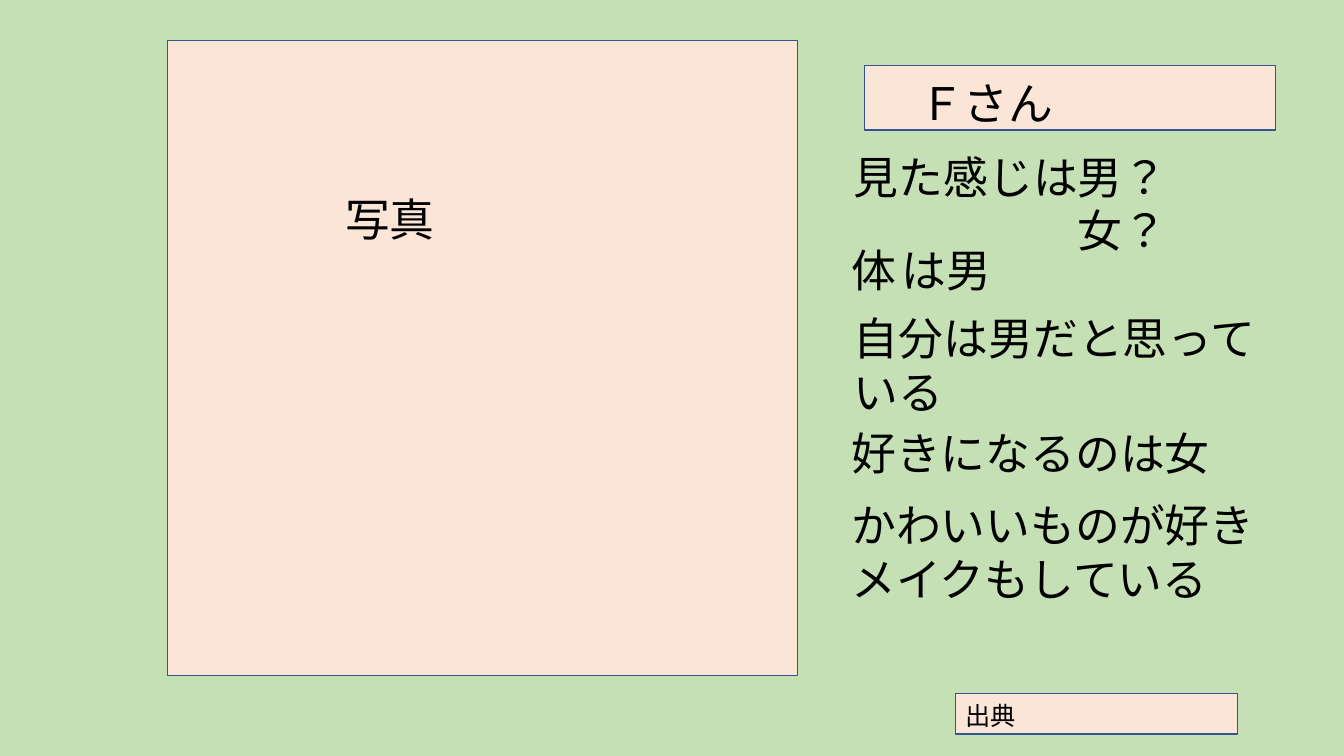
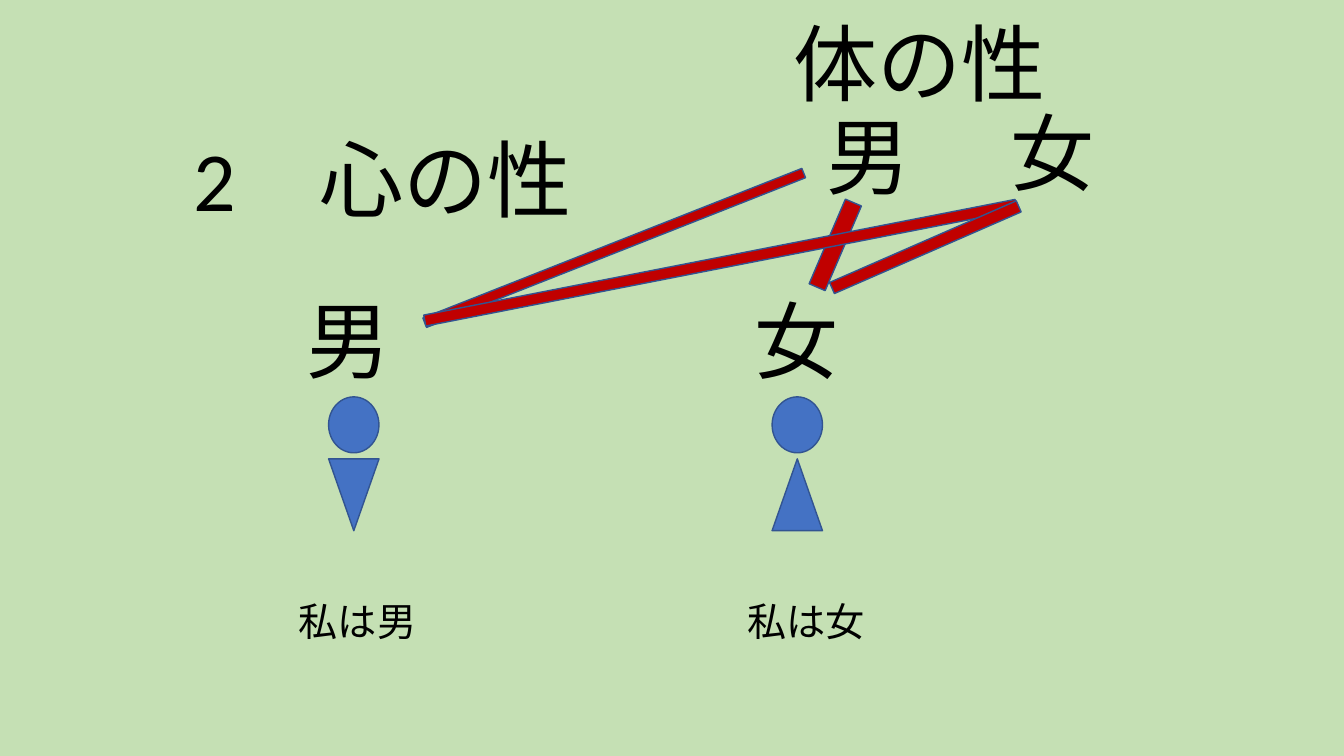
from dataclasses import dataclass
from math import atan2, degrees, hypot

from lxml.etree import SubElement
from pptx import Presentation
from pptx.dml.color import RGBColor
from pptx.enum.lang import MSO_LANGUAGE_ID as Language
from pptx.enum.shapes import MSO_SHAPE as Shape
from pptx.enum.text import MSO_ANCHOR as Anchor, MSO_AUTO_SIZE as AutoSize, PP_ALIGN as Align
from pptx.oxml.ns import qn
from pptx.util import Inches, Pt


@dataclass(frozen=True)
class Theme:
    width: int = Inches(13.333)
    height: int = Inches(7.5)
    font: str = "Calibri"
    text: RGBColor = RGBColor.from_string("000000")
    background: RGBColor = RGBColor.from_string("C5E0B4")
    panel: RGBColor = RGBColor.from_string("FBE5D6")
    figure: RGBColor = RGBColor.from_string("4472C4")
    bar: RGBColor = RGBColor.from_string("C00000")
    outline: RGBColor = RGBColor.from_string("325491")
    heading: int = 60
    body: int = 32
    caption: int = 28
    source: int = 18


THEME = Theme()
FLOWING = {
    "frame": {"word_wrap": True, "auto_size": AutoSize.SHAPE_TO_FIT_TEXT,
              "vertical_anchor": Anchor.TOP},
    "paragraph": {"alignment": Align.LEFT, "line_spacing": 1.0},
}
UNWRAPPED = {
    "frame": {**FLOWING["frame"], "word_wrap": False},
    "paragraph": FLOWING["paragraph"],
}
HEADING = {
    "frame": {"word_wrap": True, "auto_size": AutoSize.NONE,
              "vertical_anchor": Anchor.BOTTOM},
    "paragraph": {"alignment": Align.CENTER, "line_spacing": 0.9},
}


def across(share):
    return round(THEME.width * share / 100)


def down(share):
    return round(THEME.height * share / 100)


def place(left, top, width, height):
    return across(left), down(top), across(width), down(height)


def apply(target, values):
    for name, value in values.items():
        setattr(target, name, value)


def write(frame, lines, size, style=FLOWING, indents=(), tab=None):
    frame.text = "\n".join(lines)
    apply(frame, style["frame"])
    for index, paragraph in enumerate(frame.paragraphs):
        apply(paragraph, style["paragraph"])
        properties = paragraph._p.get_or_add_pPr()
        if indents:
            properties.set("marL", str(Pt(size * indents[index])))
            properties.set("indent", "0")
        if tab:
            stops = SubElement(properties, qn("a:tabLst"))
            SubElement(stops, qn("a:tab"), pos=str(tab), algn="l")
        for run in paragraph.runs:
            apply(run.font, {"name": THEME.font, "size": Pt(size),
                             "language_id": Language.JAPANESE})
            run.font.color.rgb = THEME.text


def add_text(slide, box, lines, size, **layout):
    write(slide.shapes.add_textbox(*place(*box)).text_frame, lines, size, **layout)


def add_heading(slide, box, text):
    add_text(slide, box, [text], THEME.heading, style=HEADING)


def add_title(slide, box, text, size, **layout):
    title = slide.shapes.title
    apply(title, dict(zip(("left", "top", "width", "height"), place(*box))))
    write(title.text_frame, [text], size, **layout)
    return title


def add_block(slide, kind, bounds, color, rotation=0):
    block = slide.shapes.add_shape(kind, *bounds)
    block.rotation = rotation
    block.shadow.inherit = False
    block.fill.solid()
    block.fill.fore_color.rgb = color
    block.line.color.rgb = THEME.outline
    block.line.width = Pt(1)


def add_bar(slide, start, end, thickness):
    x1, y1 = across(start[0]), down(start[1])
    x2, y2 = across(end[0]), down(end[1])
    width, length = across(thickness), round(hypot(x2 - x1, y2 - y1))
    bounds = ((x1 + x2 - width) // 2, (y1 + y2 - length) // 2, width, length)
    add_block(slide, Shape.RECTANGLE, bounds, THEME.bar, degrees(atan2(x2 - x1, y1 - y2)))


def add_person(slide, text_left, figure_left, gender, body_rotation):
    add_heading(slide, (text_left, 37, 11.8, 15.3), gender)
    add_block(slide, Shape.OVAL, place(figure_left, 52.5, 3.75, 7.4), THEME.figure)
    add_block(slide, Shape.ISOSCELES_TRIANGLE, place(figure_left, 60.7, 3.75, 9.5),
              THEME.figure, body_rotation)
    add_text(slide, (text_left + 1.5, 78.3, 10.4, 7.6), [f"私は{gender}"],
             THEME.caption, style=UNWRAPPED)


def build_profile(deck):
    slide = deck.slides.add_slide(deck.slide_layouts.get_by_name("Title Only"))
    panels = [(71.1, 91.7, 21, 5.4), (64.3, 8.7, 30.6, 8.5), (12.45, 5.33, 46.9, 84)]
    for panel in panels:
        add_block(slide, Shape.RECTANGLE, place(*panel), THEME.panel)

    name = add_title(slide, (64.3, 9.3, 32.1, 8.5), "Ｆさん", THEME.body, indents=(1,))
    slide.shapes._spTree.append(name._element)

    add_text(slide, (71.1, 92, 8.3, 5.4), ["出典"], THEME.source)
    add_text(slide, (21.6, 24.7, 32.1, 8.5), ["写真"], THEME.body, indents=(1,))

    facts = [
        (62.8, 19.1, 35.5, 15.7, ["見た感じは男？", "女？"], {"indents": (0, 5)}),
        (62.6, 31.5, 35.5, 8.5, ["体\tは男"], {"tab": Inches(0.5)}),
        (62.8, 40.5, 32.1, 15.7, ["自分は男だと思っている"], {}),
        (62.6, 55.7, 35.5, 8.5, ["好きになるのは女"], {}),
        (62.6, 65.2, 35.5, 15.7, ["かわいいものが好き", "メイクもしている"], {}),
    ]
    for *box, lines, layout in facts:
        add_text(slide, box, lines, THEME.body, **layout)


def build_matching(deck):
    slide = deck.slides.add_slide(deck.slide_layouts.get_by_name("Title Slide"))
    subtitle = slide.placeholders[1]._element
    subtitle.getparent().remove(subtitle)
    add_title(slide, (11.8, 15.7, 33.3, 15.3), "2　心の性", THEME.heading, style=HEADING)

    add_person(slide, 20, 24.45, "男", 180)
    add_person(slide, 53.4, 57.45, "女", 0)

    add_heading(slide, (56.6, 0.4, 23.6, 15.3), "体の性")
    add_heading(slide, (58.7, 12.7, 11.8, 15.3), "男")
    add_heading(slide, (72.4, 12.1, 11.8, 15.3), "女")

    bars = [
        ((31.6, 42.7), (59.8, 22.9), 0.75),
        ((60.8, 38), (63.5, 26.8), 1.3),
        ((31.6, 42.4), (75.6, 27.1), 0.83),
        ((61.9, 38.1), (75.8, 27.3), 0.9),
    ]
    for start, end, thickness in bars:
        add_bar(slide, start, end, thickness)


def main():
    deck = Presentation()
    apply(deck, {"slide_width": THEME.width, "slide_height": THEME.height})
    backdrop = deck.slide_master.background.fill
    backdrop.solid()
    backdrop.fore_color.rgb = THEME.background
    build_profile(deck)
    build_matching(deck)
    deck.save("out.pptx")


if __name__ == "__main__":
    main()
